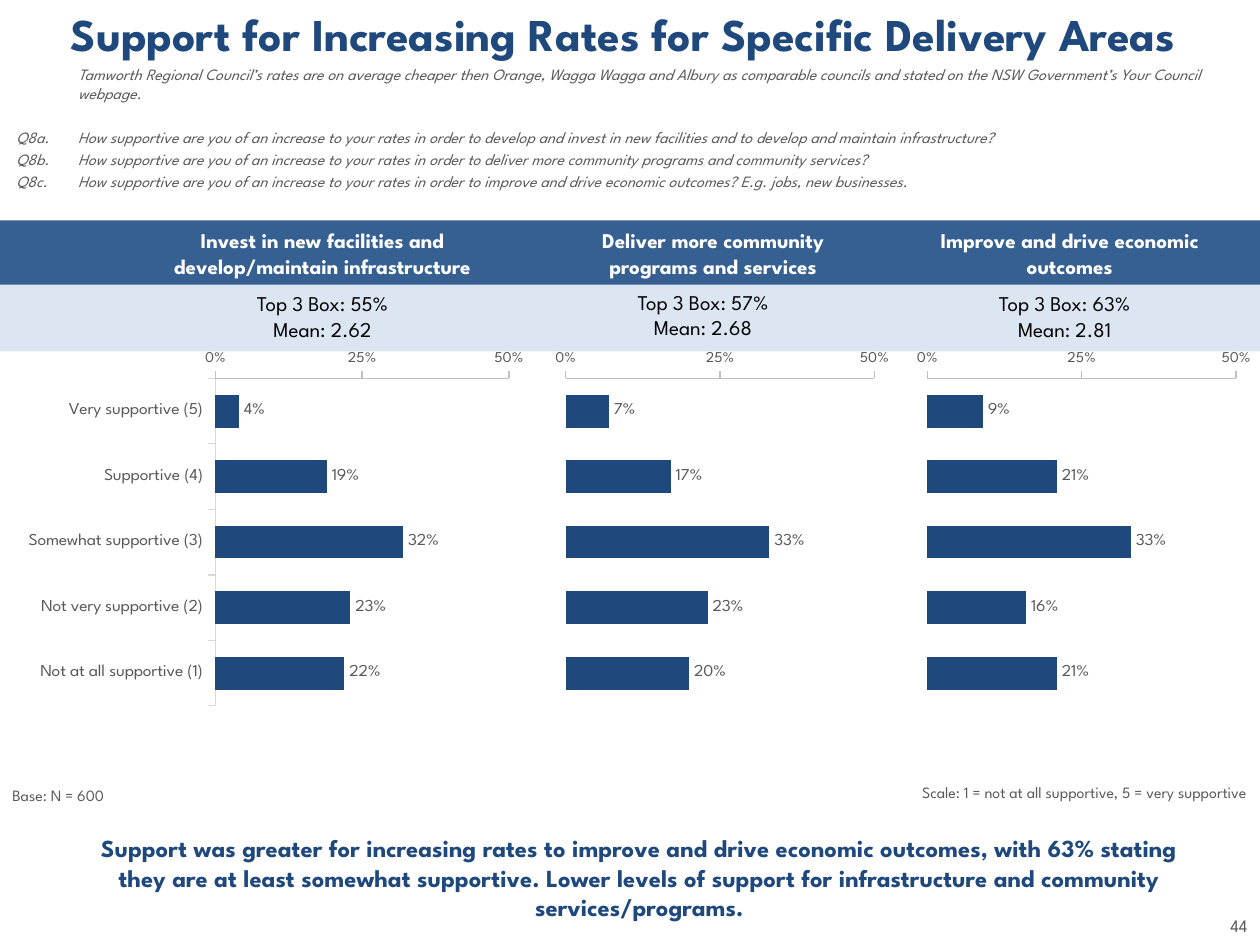
"""Build the slide comparing support for rate increases across three delivery areas."""
import dataclasses

import pptx
import pptx.chart.data
import pptx.dml.color
import pptx.enum.chart
import pptx.enum.shapes
import pptx.enum.text
import pptx.oxml
import pptx.oxml.ns
import pptx.util
from pptx.util import Inches

FONT = "League Spartan"
COLOURS = {
    "navy": "1F497D",
    "header": "376092",
    "summary": "DCE6F2",
    "grey": "595959",
    "category_line": "D9D9D9",
    "value_line": "BFBFBF",
    "white": "FFFFFF",
    "black": "000000",
}
ALIGN = pptx.enum.text.PP_ALIGN
ANCHOR = pptx.enum.text.MSO_ANCHOR
RATINGS = ("Very supportive (5)", "Supportive (4)", "Somewhat supportive (3)",
           "Not very supportive (2)", "Not at all supportive (1)")
CHART_TOP, CHART_HEIGHT = 2.8, 3.07
PLOT_TOP, PLOT_HEIGHT = 2.86, 2.73
HANGING_INDENT = 0.49


@dataclasses.dataclass(frozen=True)
class Box:
    left: float
    top: float
    width: float
    height: float

    def lengths(self) -> tuple:
        return tuple(Inches(value) for value in dataclasses.astuple(self))


@dataclasses.dataclass(frozen=True)
class Style:
    size: float
    colour: str
    bold: bool = False
    italic: bool = False
    align: object = ALIGN.LEFT
    before: float = 0


@dataclasses.dataclass(frozen=True)
class Area:
    heading: str
    heading_box: Box
    summary: tuple
    summary_box: Box
    values: tuple
    chart_left: float
    chart_width: float
    plot_left: float
    plot_width: float
    labelled: bool = False


TITLE = Style(26, "navy", bold=True, align=ALIGN.CENTER, before=5.2)
CONCLUSION = Style(14, "navy", bold=True, align=ALIGN.CENTER, before=2.8)
HEADING = Style(12, "white", bold=True, align=ALIGN.CENTER)
SUMMARY = Style(12, "black", align=ALIGN.CENTER)
QUESTION = Style(9, "grey", italic=True, before=1.8)
FIRST_QUESTION = dataclasses.replace(QUESTION, before=14.5)
BASE = Style(9, "grey", before=1.8)
SCALE = Style(9, "grey", align=ALIGN.RIGHT)
PAGE_NUMBER = Style(10, "grey", align=ALIGN.RIGHT)

INTRODUCTION = ("Tamworth Regional Council’s rates are on average cheaper then Orange, Wagga Wagga and "
                "Albury as comparable councils and stated on the NSW Government’s Your Council webpage.")
QUESTION_STEM = "How supportive are you of an increase to your rates in order to "
QUESTIONS = (
    ("Q8a.", "develop and invest in new facilities and to develop and maintain infrastructure?"),
    ("Q8b.", "deliver more community programs and community services?"),
    ("Q8c.", "improve and drive economic outcomes? E.g. jobs, new businesses."),
)
AREAS = (
    Area("Invest in new facilities and develop/maintain infrastructure", Box(1.14, 1.76, 2.84, 0.5),
         ("Top 3 Box: 55%", "Mean: 2.62"), Box(1.22, 2.26, 2.68, 0.5),
         (0.04, 0.19, 0.32, 0.23, 0.22), 0.15, 4.09, 1.71, 2.33, labelled=True),
    Area("Deliver more community programs and services", Box(4.32, 1.76, 2.68, 0.5),
         ("Top 3 Box: 57%", "Mean: 2.68"), Box(4.24, 2.25, 2.68, 0.5),
         (0.07, 0.17, 0.33, 0.23, 0.2), 4.35, 2.76, 4.49, 2.45),
    Area("Improve and drive economic outcomes", Box(7.15, 1.76, 2.68, 0.5),
         ("Top 3 Box: 63%", "Mean: 2.81"), Box(7.11, 2.26, 2.68, 0.5),
         (0.09, 0.21, 0.33, 0.16, 0.21), 7.22, 2.76, 7.36, 2.45),
)


def rgb(name: str) -> pptx.dml.color.RGBColor:
    return pptx.dml.color.RGBColor.from_string(COLOURS[name])


def set_font(font, size: float, colour: str) -> None:
    font.name, font.size = FONT, pptx.util.Pt(size)
    font.color.rgb = rgb(colour)


def write(paragraph, text: str, style: Style) -> None:
    paragraph.alignment = style.align
    paragraph.space_before = pptx.util.Pt(style.before)
    run = paragraph.add_run()
    run.text = text
    set_font(run.font, style.size, style.colour)
    run.font.bold, run.font.italic = style.bold, style.italic


def fill_text(shape, lines: list, anchor=ANCHOR.TOP) -> None:
    frame = shape.text_frame
    frame.word_wrap = True
    frame.auto_size = pptx.enum.text.MSO_AUTO_SIZE.NONE
    frame.vertical_anchor = anchor
    for index, (text, style) in enumerate(lines):
        paragraph = frame.add_paragraph() if index else frame.paragraphs[0]
        write(paragraph, text, style)


def place(shape, box: Box) -> None:
    shape.left, shape.top, shape.width, shape.height = box.lengths()


def add_text(slide, box: Box, lines: list, anchor=ANCHOR.TOP) -> None:
    fill_text(slide.shapes.add_textbox(*box.lengths()), lines, anchor)


def add_band(slide, top: float, colour: str) -> None:
    band = slide.shapes.add_shape(pptx.enum.shapes.MSO_SHAPE.RECTANGLE, *Box(0, top, 10, 0.53).lengths())
    band.shadow.inherit = False
    band.fill.solid()
    band.fill.fore_color.rgb = rgb(colour)
    band.line.fill.background()


def add_questions(body) -> None:
    place(body, Box(0.03, 0.54, 10, 0.95))
    lines = [(INTRODUCTION, QUESTION)]
    for index, (number, ending) in enumerate(QUESTIONS):
        lines.append((f"{number}\t{QUESTION_STEM}{ending}", QUESTION if index else FIRST_QUESTION))
    fill_text(body, lines, ANCHOR.MIDDLE)
    for index, paragraph in enumerate(body.text_frame.paragraphs):
        properties = paragraph._p.get_or_add_pPr()
        properties.set("marL", str(Inches(HANGING_INDENT)))
        properties.set("indent", str(-Inches(HANGING_INDENT) if index else 0))
        properties.append(pptx.oxml.parse_xml(f"<a:buNone {pptx.oxml.ns.nsdecls('a')}/>"))


def fix_plot_area(chart, area: Area) -> None:
    fractions = {
        "x": (area.plot_left - area.chart_left) / area.chart_width,
        "y": (PLOT_TOP - CHART_TOP) / CHART_HEIGHT,
        "w": area.plot_width / area.chart_width,
        "h": PLOT_HEIGHT / CHART_HEIGHT,
    }
    parts = ['<c:layoutTarget val="inner"/><c:xMode val="edge"/><c:yMode val="edge"/>']
    parts += [f'<c:{key} val="{value:.4f}"/>' for key, value in fractions.items()]
    plot_area = chart.element.find(".//" + pptx.oxml.ns.qn("c:plotArea"))
    for layout in plot_area.findall(pptx.oxml.ns.qn("c:layout")):
        plot_area.remove(layout)
    plot_area.insert(0, pptx.oxml.parse_xml(
        f"<c:layout {pptx.oxml.ns.nsdecls('c')}><c:manualLayout>{''.join(parts)}</c:manualLayout></c:layout>"))


def format_axis(axis, size: float, line_colour: str) -> None:
    axis.has_major_gridlines = False
    axis.major_tick_mark = pptx.enum.chart.XL_TICK_MARK.OUTSIDE
    set_font(axis.tick_labels.font, size, "grey")
    axis.format.line.color.rgb = rgb(line_colour)
    axis.format.line.width = pptx.util.Pt(0.75)


def add_support_chart(slide, area: Area) -> None:
    data = pptx.chart.data.CategoryChartData(number_format="0%")
    data.categories = RATINGS if area.labelled else [str(number) for number in range(1, 6)]
    data.add_series("Series 1", area.values)
    box = Box(area.chart_left, CHART_TOP, area.chart_width, CHART_HEIGHT)
    chart = slide.shapes.add_chart(pptx.enum.chart.XL_CHART_TYPE.BAR_CLUSTERED, *box.lengths(), data).chart
    chart.has_legend = chart.has_title = False
    set_font(chart.font, 10, "black")
    category_axis, value_axis = chart.category_axis, chart.value_axis
    format_axis(category_axis, 10, "category_line")
    category_axis.reverse_order = True
    category_axis.crosses = pptx.enum.chart.XL_AXIS_CROSSES.MAXIMUM
    category_axis.visible = area.labelled
    format_axis(value_axis, 9, "value_line")
    value_axis.minimum_scale, value_axis.maximum_scale, value_axis.major_unit = 0, 0.5, 0.25
    value_axis.tick_labels.number_format = "0%"
    value_axis.tick_labels.number_format_is_linked = False
    plot = chart.plots[0]
    plot.gap_width, plot.vary_by_categories, plot.has_data_labels = 100, False, True
    labels = plot.data_labels
    labels.show_value = True
    labels.number_format, labels.number_format_is_linked = "0%", False
    labels.position = pptx.enum.chart.XL_LABEL_POSITION.OUTSIDE_END
    set_font(labels.font, 10, "grey")
    bars = plot.series[0].format.fill
    bars.solid()
    bars.fore_color.rgb = rgb("navy")
    fix_plot_area(chart, area)


def main() -> None:
    presentation = pptx.Presentation()
    presentation.slide_width, presentation.slide_height = Inches(10), Inches(7.5)
    slide = presentation.slides.add_slide(presentation.slide_layouts[1])
    place(slide.shapes.title, Box(0, 0, 10, 0.55))
    fill_text(slide.shapes.title, [("Support for Increasing Rates for Specific Delivery Areas ", TITLE)])
    add_questions(slide.placeholders[1])
    add_band(slide, 1.75, "header")
    add_band(slide, 2.26, "summary")
    for area in AREAS:
        add_support_chart(slide, area)
        add_text(slide, area.heading_box, [(area.heading, HEADING)])
        add_text(slide, area.summary_box, [(line, SUMMARY) for line in area.summary])
    add_text(slide, Box(0, 6.19, 9.88, 0.23), [("Base: N = 600", BASE)])
    add_text(slide, Box(5.62, 6.16, 4.37, 0.25),
             [("Scale: 1 = not at all supportive, 5 = very supportive", SCALE)])
    add_text(slide, Box(0.51, 6.43, 9.13, 1.07), [(
        "Support was greater for increasing rates to improve and drive economic outcomes, with 63% stating "
        "they are at least somewhat supportive. Lower levels of support for infrastructure and community "
        "services/programs.", CONCLUSION)], ANCHOR.MIDDLE)
    add_text(slide, Box(9.57, 7.21, 0.43, 0.27), [("44", PAGE_NUMBER)])
    presentation.save("out.pptx")


if __name__ == "__main__":
    main()
